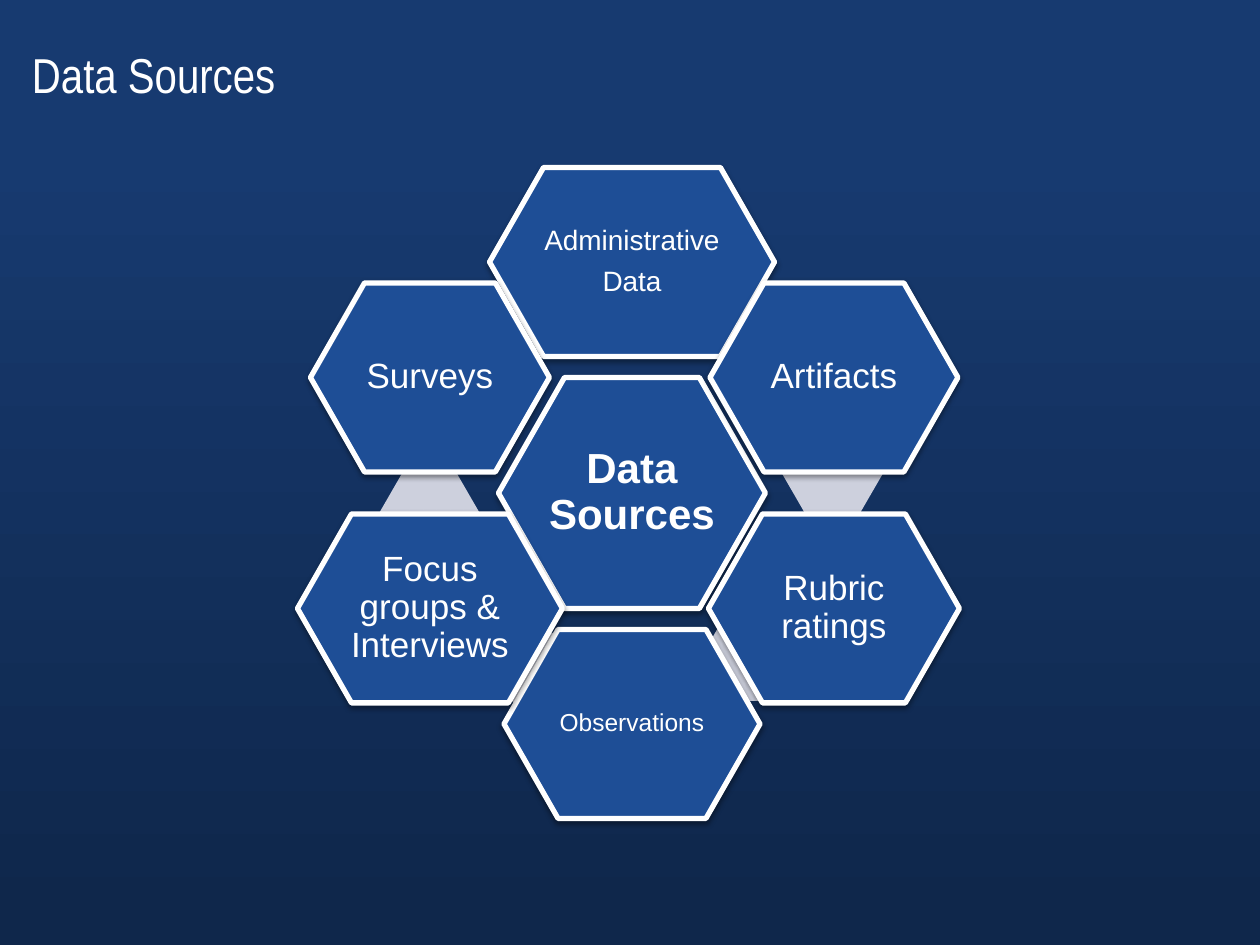
from lxml import etree
from pptx import Presentation
from pptx.dml.color import RGBColor
from pptx.enum.shapes import MSO_SHAPE
from pptx.enum.text import MSO_ANCHOR, PP_ALIGN
from pptx.oxml.ns import qn
from pptx.util import Pt

HEXAGON, RECTANGLE = MSO_SHAPE.HEXAGON, MSO_SHAPE.RECTANGLE
MIDDLE, LEFT, CENTER = MSO_ANCHOR.MIDDLE, PP_ALIGN.LEFT, PP_ALIGN.CENTER

SCALE = 914400 // 126
WIDTH, HEIGHT = 1260, 945
NAVY, DEEP, BLUE, GREY, WHITE = "173A70", "0F274B", "1E4E96", "CDD0DD", "FFFFFF"

TITLE = "Data Sources"
HUB = (632, 493)
HUB_SIZE = (267, 231)
COLUMN_STEP, ROW_STEP = 202, 115.5
PETAL_HEIGHT = 189
ACCENT_SIZE = (101, 87)

# column, row, width, lines, size, accent position
PETALS = [
    (0, -2, 285, ["Administrative", "Data"], 16, (665, 267)),
    (1, -1, 248, ["Artifacts"], 20, (782, 430)),
    (1, 1, 251, ["Rubric ratings"], 20, (701, 614)),
    (0, 2, 256, ["Observations"], 14, (498, 633)),
    (-1, 1, 265, ["Focus groups & Interviews"], 20, (379, 470)),
    (-1, -1, 239, ["Surveys"], 20, None),
]


def px(value):
    return round(value * SCALE)


def color(value):
    return RGBColor.from_string(value)


def add_shape(page, kind, left, top, width, height, fill):
    shape = page.shapes.add_shape(kind, px(left), px(top), px(width), px(height))
    shape.shadow.inherit = False
    shape.fill.solid()
    shape.fill.fore_color.rgb = color(fill)
    shape.line.fill.background()
    return shape


def write(shape, lines, size, font="Arial", bold=False, align=CENTER, inset=3):
    frame = shape.text_frame
    frame.word_wrap = True
    frame.vertical_anchor = MIDDLE
    frame.margin_left = frame.margin_right = px(inset)
    frame.margin_top = frame.margin_bottom = px(inset)
    for index, line in enumerate(lines):
        para = frame.add_paragraph() if index else frame.paragraphs[0]
        para.alignment = align
        para.line_spacing = 0.9
        if index < len(lines) - 1:
            para.space_after = Pt(6)
        span = para.add_run()
        span.text = line
        span.font.size = Pt(size)
        span.font.name = font
        span.font.bold = bold
        span.font.color.rgb = color(WHITE)


def add_shadow(shape):
    effects = shape._element.spPr.find(qn("a:effectLst"))
    shadow = etree.SubElement(effects, qn("a:outerShdw"), blurRad=str(Pt(3.1)),
                              dist=str(Pt(1.6)), dir="5400000", rotWithShape="0")
    tint = etree.SubElement(shadow, qn("a:srgbClr"), val="000000")
    etree.SubElement(tint, qn("a:alpha"), val="38000")


def add_cell(page, center, size, lines, points, bold=False):
    (x, y), (width, height) = center, size
    cell = add_shape(page, HEXAGON, x - width / 2, y - height / 2, width, height, BLUE)
    cell.adjustments[0] = 0.286
    cell.line.color.rgb = color(WHITE)
    cell.line.width = Pt(3)
    add_shadow(cell)
    write(cell, lines, points, bold=bold)


def main():
    deck = Presentation()
    deck.slide_width, deck.slide_height = px(WIDTH), px(HEIGHT)
    page = deck.slides.add_slide(deck.slide_layouts[6])
    page.background.fill.solid()
    page.background.fill.fore_color.rgb = color(NAVY)

    fade = add_shape(page, RECTANGLE, 0, 149, WIDTH, 771, NAVY)
    fade.fill.gradient()
    fade.fill.gradient_angle = 270
    for stop, shade in zip(fade.fill.gradient_stops, (NAVY, DEEP)):
        stop.color.rgb = color(shade)
    add_shape(page, RECTANGLE, 0, 897, WIDTH, 48, DEEP)

    title = page.shapes.add_textbox(px(19), px(25), px(1218), px(105))
    write(title, [TITLE], 28, font="Arial Narrow", align=LEFT, inset=13)

    add_cell(page, HUB, HUB_SIZE, [TITLE], 24, bold=True)
    for column, row, width, lines, points, accent in PETALS:
        if accent:
            add_shape(page, HEXAGON, *accent, *ACCENT_SIZE, GREY).adjustments[0] = 0.289
        center = (HUB[0] + column * COLUMN_STEP, HUB[1] + row * ROW_STEP)
        add_cell(page, center, (width, PETAL_HEIGHT), lines, points)

    deck.save("out.pptx")


if __name__ == "__main__":
    main()
